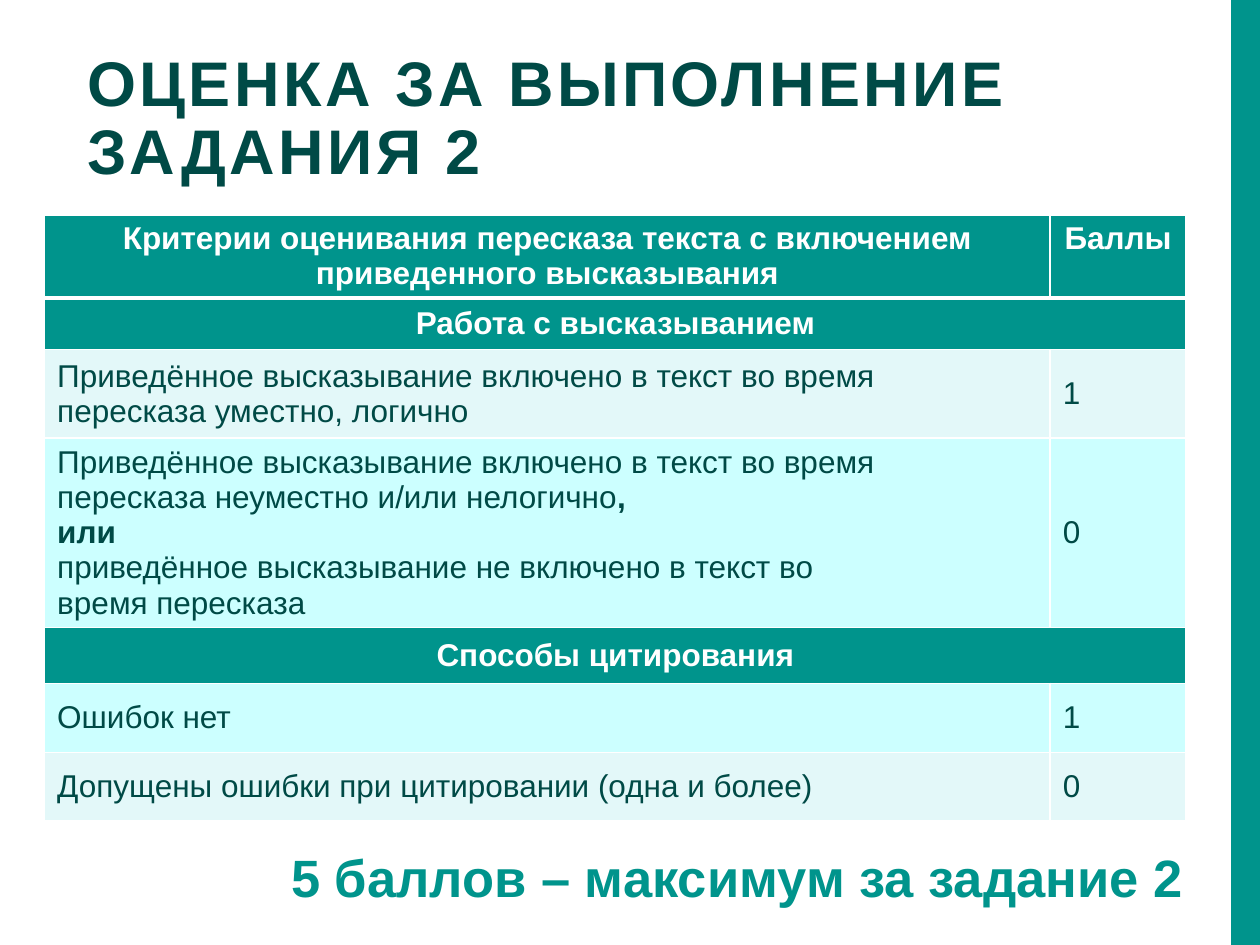
from lxml import etree
from pptx import Presentation
from pptx.dml.color import RGBColor
from pptx.enum.shapes import MSO_SHAPE
from pptx.enum.text import MSO_ANCHOR, MSO_AUTO_SIZE, PP_ALIGN
from pptx.oxml.ns import qn
from pptx.util import Cm, Pt

RECTANGLE = MSO_SHAPE.RECTANGLE
TOP, MIDDLE = MSO_ANCHOR.TOP, MSO_ANCHOR.MIDDLE
NO_AUTOFIT = MSO_AUTO_SIZE.NONE
LEFT, CENTER, RIGHT = PP_ALIGN.LEFT, PP_ALIGN.CENTER, PP_ALIGN.RIGHT

FONT = "Arial"
TEAL, DARK, WHITE = "00948C", "004A46", "FFFFFF"
ROW_FILLS = ("E3F8F9", "CCFFFF")
PAGE_WIDTH, PAGE_HEIGHT = 25.4, 19.05

COLUMN_WIDTHS = (20.27, 2.74)
CRITERIA = [
    ("header", 1.65, "Критерии оценивания пересказа текста с включением "
                     "приведенного высказывания", "Баллы"),
    ("band", 1.04, "Работа с высказыванием", ""),
    ("row", 1.78, "Приведённое высказывание включено в текст во время\n"
                  "пересказа уместно, логично", "1"),
    ("row", 3.82, "Приведённое высказывание включено в текст во время\n"
                  "пересказа неуместно и/или нелогично**,**\n"
                  "**или**\n"
                  "приведённое высказывание не включено в текст во\n"
                  "время пересказа", "0"),
    ("band", 1.13, "Способы цитирования", ""),
    ("row", 1.39, "Ошибок нет", "1"),
    ("row", 1.39, "Допущены ошибки при цитировании (одна и более)", "0"),
]


def color(value):
    return RGBColor.from_string(value)


def style_span(span, size, tint, bold):
    span.font.name = FONT
    span.font.size = Pt(size)
    span.font.bold = bold
    span.font.color.rgb = color(tint)


def write(frame, text, size, tint, align, bold=False):
    frame.text = text.replace("**", "")
    for para, line in zip(frame.paragraphs, text.split("\n")):
        para.alignment = align
        para.text = ""
        for index, part in enumerate(line.split("**")):
            if part:
                span = para.add_run()
                span.text = part
                style_span(span, size, tint, bold or index % 2 == 1)


def set_borders(cell, top, bottom):
    properties = cell._tc.get_or_add_tcPr()
    sides = (("a:lnL", 1), ("a:lnR", 1), ("a:lnT", top), ("a:lnB", bottom))
    for index, (tag, width) in enumerate(sides):
        line = etree.Element(qn(tag), w=str(Pt(width)))
        fill = etree.SubElement(line, qn("a:solidFill"))
        etree.SubElement(fill, qn("a:srgbClr"), val=WHITE)
        properties.insert(index, line)


def add_side_bar(page, left, top, width, height):
    bar = page.shapes.add_shape(RECTANGLE, Cm(left), Cm(top), Cm(width), Cm(height))
    bar.shadow.inherit = False
    bar.fill.solid()
    bar.fill.fore_color.rgb = color(TEAL)
    bar.line.fill.background()


def place_title(page, left, top, width, height):
    title = page.shapes.title
    title.left, title.top, title.width, title.height = map(Cm, (left, top, width, height))
    frame = title.text_frame
    frame.word_wrap = True
    frame.auto_size = NO_AUTOFIT
    frame.vertical_anchor = TOP
    write(frame, "ОЦЕНКА ЗА ВЫПОЛНЕНИЕ ЗАДАНИЯ 2", 36, DARK, LEFT, True)
    para = frame.paragraphs[0]
    para.line_spacing = 0.9
    para.space_before = Pt(0)
    para.runs[0].font._element.set("spc", "200")


def add_criteria_table(page, left, top):
    height = sum(row[1] for row in CRITERIA)
    table = page.shapes.add_table(
        len(CRITERIA), len(COLUMN_WIDTHS),
        Cm(left), Cm(top), Cm(sum(COLUMN_WIDTHS)), Cm(height)).table
    for column, width in zip(table.columns, COLUMN_WIDTHS):
        column.width = Cm(width)
    for index, (kind, row_height, *texts) in enumerate(CRITERIA):
        table.rows[index].height = Cm(row_height)
        plain = kind == "row"
        for column, text in enumerate(texts):
            cell = table.cell(index, column)
            cell.fill.solid()
            cell.fill.fore_color.rgb = color(ROW_FILLS[index % 2] if plain else TEAL)
            set_borders(cell, 3 if index == 1 else 1, 3 if index == 0 else 1)
            cell.vertical_anchor = TOP if text == "Баллы" else MIDDLE
            write(cell.text_frame, text, 18, DARK if plain else WHITE,
                  LEFT if plain else CENTER, not plain)
        if kind == "band":
            table.cell(index, 0).merge(table.cell(index, 1))


def add_total(page, left, top, width, height):
    box = page.shapes.add_textbox(Cm(left), Cm(top), Cm(width), Cm(height))
    box.text_frame.word_wrap = True
    write(box.text_frame, "5 баллов – максимум за задание 2", 30, TEAL, RIGHT, True)


def main():
    deck = Presentation()
    deck.slide_width, deck.slide_height = Cm(PAGE_WIDTH), Cm(PAGE_HEIGHT)
    page = deck.slides.add_slide(deck.slide_layouts[5])
    bar_width = 0.58
    add_side_bar(page, PAGE_WIDTH - bar_width, 0, bar_width, PAGE_HEIGHT)
    place_title(page, 1.5, 0.92, 22.86, 1.6)
    add_criteria_table(page, 0.9, 4.33)
    add_total(page, 2.1, 16.92, 22, 1.54)
    deck.save("out.pptx")


if __name__ == "__main__":
    main()
